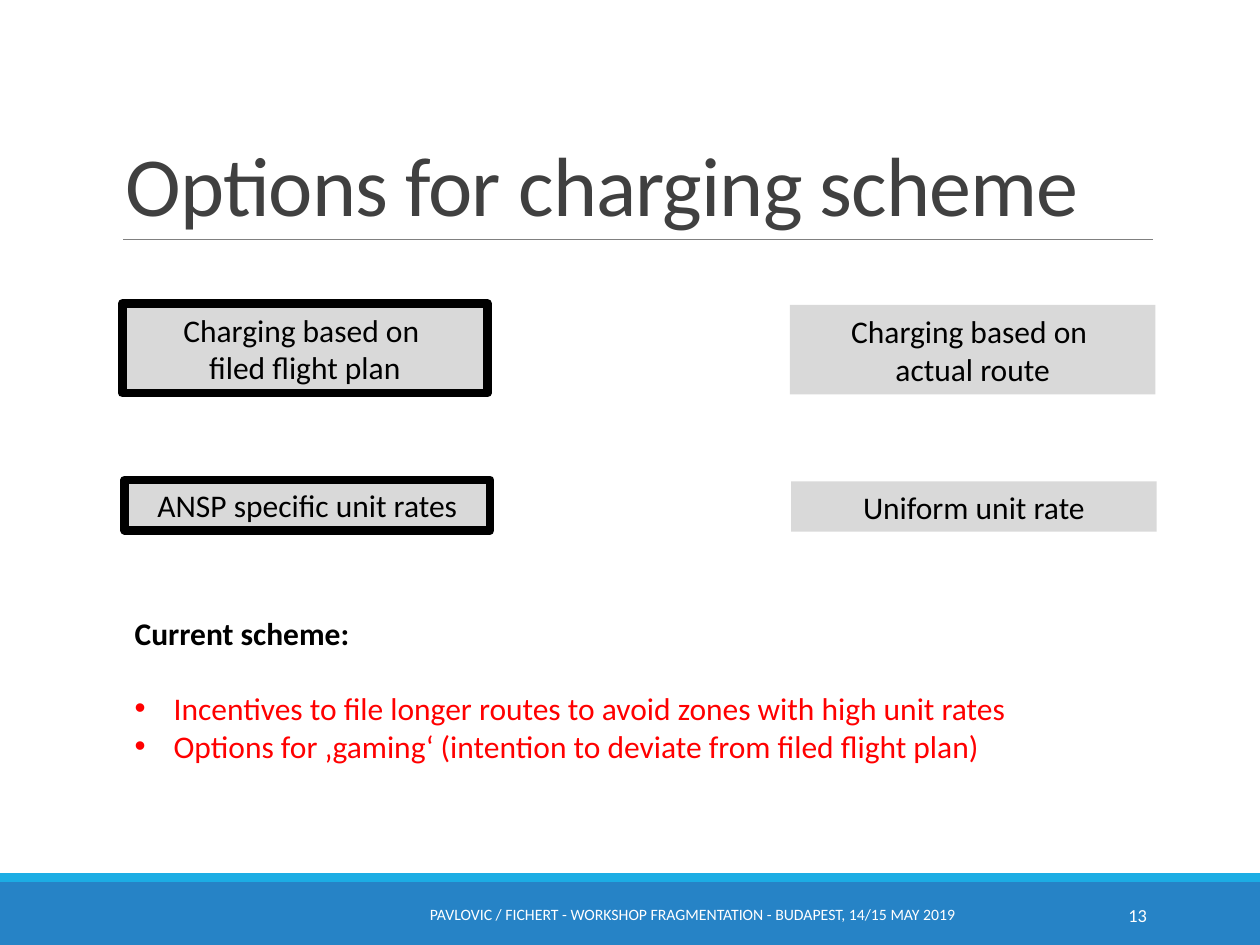
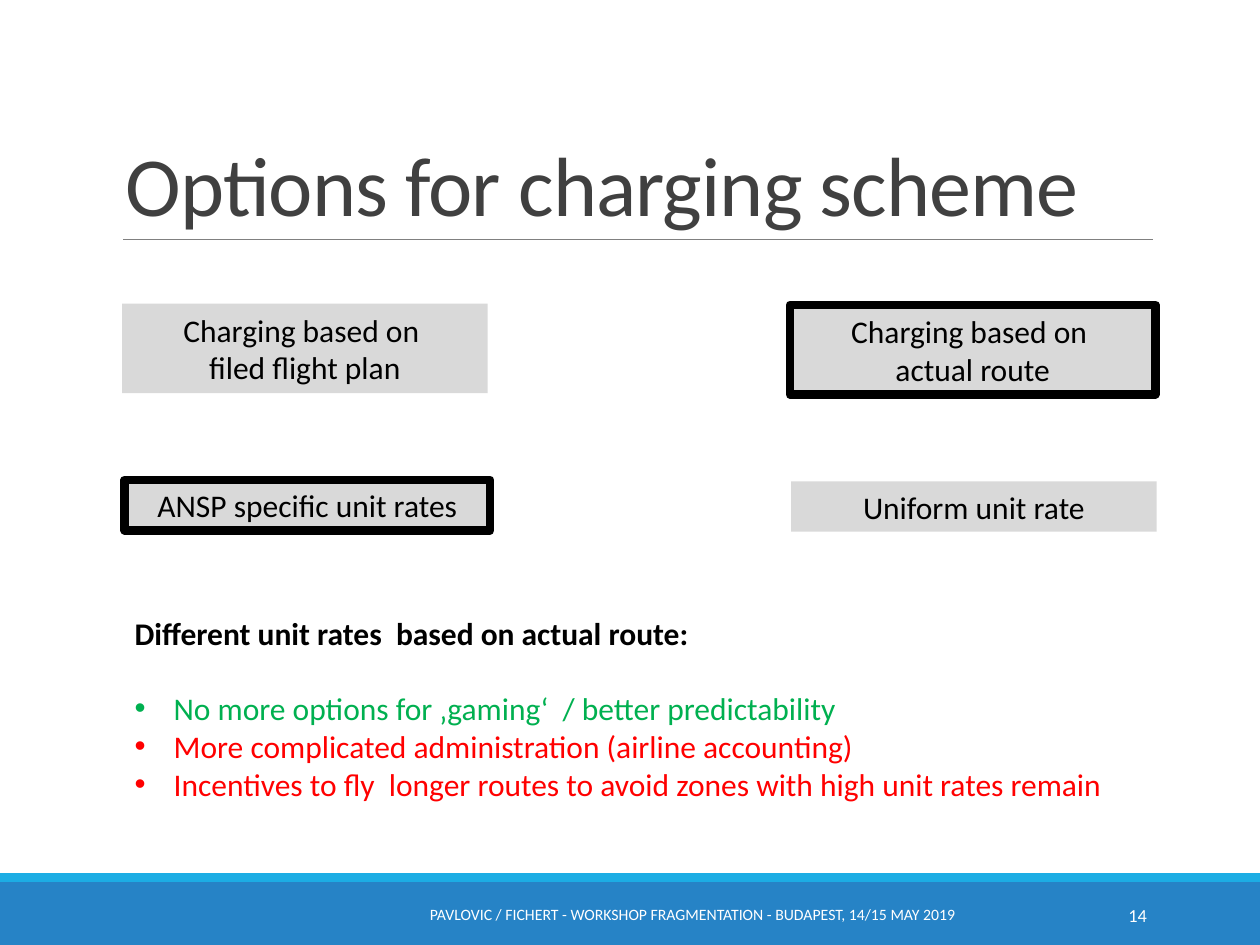
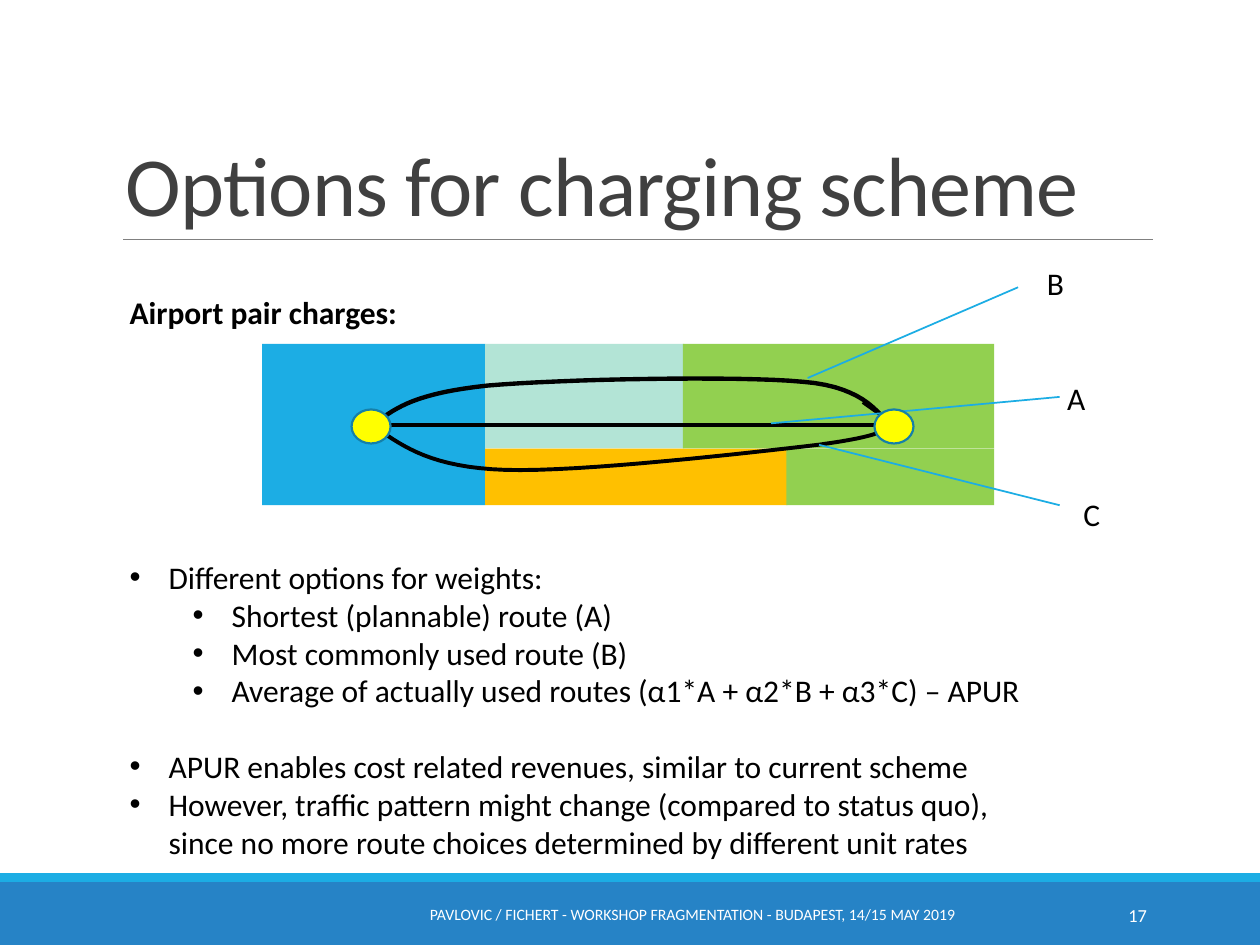
from lxml import etree
from pptx import Presentation
from pptx.dml.color import RGBColor
from pptx.enum.shapes import MSO_CONNECTOR, MSO_SHAPE
from pptx.enum.text import MSO_ANCHOR, MSO_AUTO_SIZE, PP_ALIGN
from pptx.oxml.ns import qn
from pptx.util import Inches, Pt

FONT = "Calibri"
TITLE = "Options for charging scheme"
FOOTER = "PAVLOVIC / FICHERT - WORKSHOP FRAGMENTATION - BUDAPEST, 14/15 MAY 2019"
BODY_SIZE = 18
LINE_PITCH = 1.2 * BODY_SIZE

BLACK = RGBColor(0x00, 0x00, 0x00)
WHITE = RGBColor(0xFF, 0xFF, 0xFF)
DARK = RGBColor(0x40, 0x40, 0x40)
RULE = RGBColor(0x80, 0x80, 0x80)
BOX_GREY = RGBColor(0xD9, 0xD9, 0xD9)
BAND = RGBColor(0x26, 0x83, 0xC6)
SKY = RGBColor(0x1C, 0xAD, 0xE4)
SKY_DARK = RGBColor(0x15, 0x80, 0xA9)
MINT = RGBColor(0xB3, 0xE4, 0xD6)
AMBER = RGBColor(0xFF, 0xC0, 0x00)
LIME = RGBColor(0x92, 0xD0, 0x50)
YELLOW = RGBColor(0xFF, 0xFF, 0x00)
RED = RGBColor(0xFF, 0x00, 0x00)
GREEN = RGBColor(0x00, 0xB0, 0x50)


def style_paragraph(p, text, size=BODY_SIZE, color=BLACK, align=None, bold=None):
    """Fill a paragraph and set its font."""
    p.text = text
    p.alignment = align
    p.font.name, p.font.size, p.font.bold = FONT, Pt(size), bold
    p.font.color.rgb = color


def add_text(s, box, text, anchor=MSO_ANCHOR.TOP, **style):
    """Add a wrapped one-paragraph text box and return its paragraph."""
    tf = s.shapes.add_textbox(*map(Inches, box)).text_frame
    tf.word_wrap = True
    tf.vertical_anchor = anchor
    style_paragraph(tf.paragraphs[0], text, **style)
    return tf.paragraphs[0]


def add_block(s, box, fill, line=None, width=1, kind=MSO_SHAPE.RECTANGLE):
    """Add a filled preset shape, outlined if a line colour is given."""
    sp = s.shapes.add_shape(kind, *map(Inches, box))
    sp.shadow.inherit = False
    sp.fill.solid()
    sp.fill.fore_color.rgb = fill
    if line is None:
        sp.line.fill.background()
    else:
        sp.line.color.rgb, sp.line.width = line, Pt(width)
    return sp


def add_line(s, start, end, color, width):
    """Add a straight connector without a shadow."""
    cx = s.shapes.add_connector(MSO_CONNECTOR.STRAIGHT, *map(Inches, (*start, *end)))
    cx.line.color.rgb, cx.line.width = color, Pt(width)
    etree.SubElement(cx._element.spPr, qn("a:effectLst"))


def add_curve(s, points, color, width, steps=16):
    """Draw chained cubic curves through a start point and control triples."""
    path = points[:1]
    for i in range(0, len(points) - 1, 3):
        a, b, c, d = points[i:i + 4]
        for t in (k / steps for k in range(1, steps + 1)):
            u = 1 - t
            path.append(tuple(
                u**3 * a[n] + 3 * u * u * t * b[n] + 3 * u * t * t * c[n] + t**3 * d[n]
                for n in (0, 1)))
    emu = [(Inches(x), Inches(y)) for x, y in path]
    builder = s.shapes.build_freeform(*emu[0])
    builder.add_line_segments(emu[1:], close=False)
    sp = builder.convert_to_shape()
    sp.shadow.inherit = False
    sp.fill.background()
    sp.line.color.rgb, sp.line.width = color, Pt(width)


def add_base_slide(prs, number):
    """Add a slide with the shared title, rule, bands and footer."""
    s = prs.slides.add_slide(prs.slide_layouts[6])
    add_block(s, (0, 7, 10, 0.5), BAND)
    add_block(s, (0, 6.93, 10, 0.07), SKY)
    add_line(s, (0.98, 1.9), (9.15, 1.9), RULE, 0.5)
    p = add_text(s, (0.9, 0.31, 8.25, 1.59), TITLE, MSO_ANCHOR.BOTTOM, size=48, color=DARK)
    p.line_spacing = 0.85
    p.runs[0].font._element.set("spc", "-50")
    add_text(s, (8.12, 7.06, 1.08, 0.4), str(number), MSO_ANCHOR.MIDDLE,
             size=10.5, color=WHITE, align=PP_ALIGN.RIGHT)
    add_text(s, (3.02, 7.06, 4.95, 0.4), FOOTER, MSO_ANCHOR.MIDDLE,
             size=9, color=WHITE, align=PP_ALIGN.CENTER)
    return s


def add_bullets(s, box, heading, items):
    """Add a bold heading and bullets given as (text, colour, level, lines before)."""
    tf = s.shapes.add_textbox(*map(Inches, box)).text_frame
    tf.word_wrap = True
    tf.auto_size = MSO_AUTO_SIZE.SHAPE_TO_FIT_TEXT
    style_paragraph(tf.paragraphs[0], heading, bold=True)
    for text, color, level, lines_before in items:
        p = tf.add_paragraph()
        style_paragraph(p, text, color=color)
        p.level = level
        p.space_before = Pt(LINE_PITCH * lines_before)
        pPr = p._p.get_or_add_pPr()
        pPr.set("marL", str(Inches(0.31 + 0.5 * level)))
        pPr.set("indent", str(Inches(-0.31)))
        font = etree.Element(qn("a:buFont"), typeface="Arial")
        char = etree.Element(qn("a:buChar"), char="•")
        pPr.find(qn("a:defRPr")).addprevious(font)
        font.addnext(char)


def add_options(s, left, top, chosen):
    """Place the four scheme options and outline the chosen ones."""
    options = [
        ("Charging based on \vfiled flight plan", 0, 0, 0.71),
        ("Charging based on \vactual route", 5.3, 0.01, 0.71),
        ("ANSP specific unit rates", 0.02, 1.4, 0.4),
        ("Uniform unit rate", 5.31, 1.41, 0.4),
    ]
    for i, (text, dx, dy, height) in enumerate(options):
        line = BLACK if i in chosen else None
        sp = add_block(s, (left + dx, top + dy, 2.9, height), BOX_GREY, line, 5)
        tf = sp.text_frame
        tf.word_wrap = True
        tf.auto_size = MSO_AUTO_SIZE.SHAPE_TO_FIT_TEXT
        style_paragraph(tf.paragraphs[0], text, align=PP_ALIGN.CENTER)


def add_airport_map(s, left, top):
    """Draw the zones, the three routes with labels and the two airports."""
    def at(*points):
        return [(left + x, top + y) for x, y in points]

    zones = [
        (0, 0, 1.77, 1.28, SKY), (1.77, 0, 1.58, 0.83, MINT),
        (1.77, 0.83, 2.4, 0.45, AMBER), (3.34, 0, 2.47, 0.83, LIME),
        (4.16, 0.83, 1.65, 0.45, LIME),
    ]
    for x, y, w, h, fill in zones:
        add_block(s, (left + x, top + y, w, h), fill)

    add_line(s, *at((0.88, 0.64), (4.99, 0.64)), BLACK, 2.25)
    add_curve(s, at((0.91, 0.62), (1.07, 0.5), (1.23, 0.39), (1.79, 0.33),
                    (2.36, 0.28), (3.76, 0.25), (4.29, 0.3),
                    (4.82, 0.34), (4.91, 0.6), (4.98, 0.63),
                    (5.06, 0.66), (4.91, 0.56), (4.77, 0.46)), BLACK, 2.5)
    add_curve(s, at((0.91, 0.67), (1.13, 0.82), (1.35, 0.98), (1.93, 1),
                    (2.52, 1.02), (3.91, 0.86), (4.42, 0.8),
                    (4.93, 0.73), (4.96, 0.68), (4.98, 0.63)), BLACK, 2.25)

    labels = [
        ("C", (4.42, 0.8), (6.33, 1.28), (6.42, 1.15)),
        ("B", (4.33, 0.27), (6, -0.45), (6.13, -0.68)),
        ("A", (4.04, 0.63), (6.33, 0.42), (6.29, 0.23)),
    ]
    for name, start, end, corner in labels:
        add_line(s, *at(start, end), SKY, 1)
        add_text(s, (*at(corner)[0], 0.45, 0.4), name)
    for x in (0.71, 4.86):
        add_block(s, (left + x, top + 0.52, 0.31, 0.27), YELLOW, SKY_DARK, 1.25,
                  MSO_SHAPE.OVAL)


def add_option_slide(prs, number, chosen, heading, items, height):
    """Add a slide that assesses one choice of options."""
    s = add_base_slide(prs, number)
    add_options(s, 0.97, 2.41, chosen)
    add_bullets(s, (0.97, 4.82, 8.21, height), heading, items)


def add_airport_pair_slide(prs, number):
    """Add the slide on airport pair charges."""
    s = add_base_slide(prs, number)
    add_bullets(s, (0.93, 2.28, 8.21, 4.64), "Airport pair charges:", [
        ("Different options for weights:", BLACK, 0, 6),
        ("Shortest (plannable) route (A)", BLACK, 1, 0),
        ("Most commonly used route (B)", BLACK, 1, 0),
        ("Average of actually used routes (α1*A + α2*B + α3*C) – APUR", BLACK, 1, 0),
        ("APUR enables cost related revenues, similar to current scheme", BLACK, 0, 1),
        ("However, traffic pattern might change (compared to status quo), \v"
         "since no more route choices determined by different unit rates", BLACK, 0, 0),
    ])
    add_airport_map(s, 2.08, 2.73)


def main():
    """Build and save the presentation."""
    prs = Presentation()
    prs.slide_width, prs.slide_height = Inches(10), Inches(7.5)
    add_option_slide(prs, 13, (0, 2), "Current scheme:", [
        ("Incentives to file longer routes to avoid zones with high unit rates", RED, 0, 1),
        ("Options for ‚gaming‘ (intention to deviate from filed flight plan)", RED, 0, 0),
    ], 1.31)
    add_option_slide(prs, 14, (1, 2), "Different unit rates  based on actual route:", [
        ("No more options for ‚gaming‘  / better predictability", GREEN, 0, 1),
        ("More complicated administration (airline accounting)", RED, 0, 0),
        ("Incentives to fly  longer routes to avoid zones with high unit rates remain",
         RED, 0, 0),
    ], 1.62)
    add_airport_pair_slide(prs, 17)
    prs.save("out.pptx")


if __name__ == "__main__":
    main()
